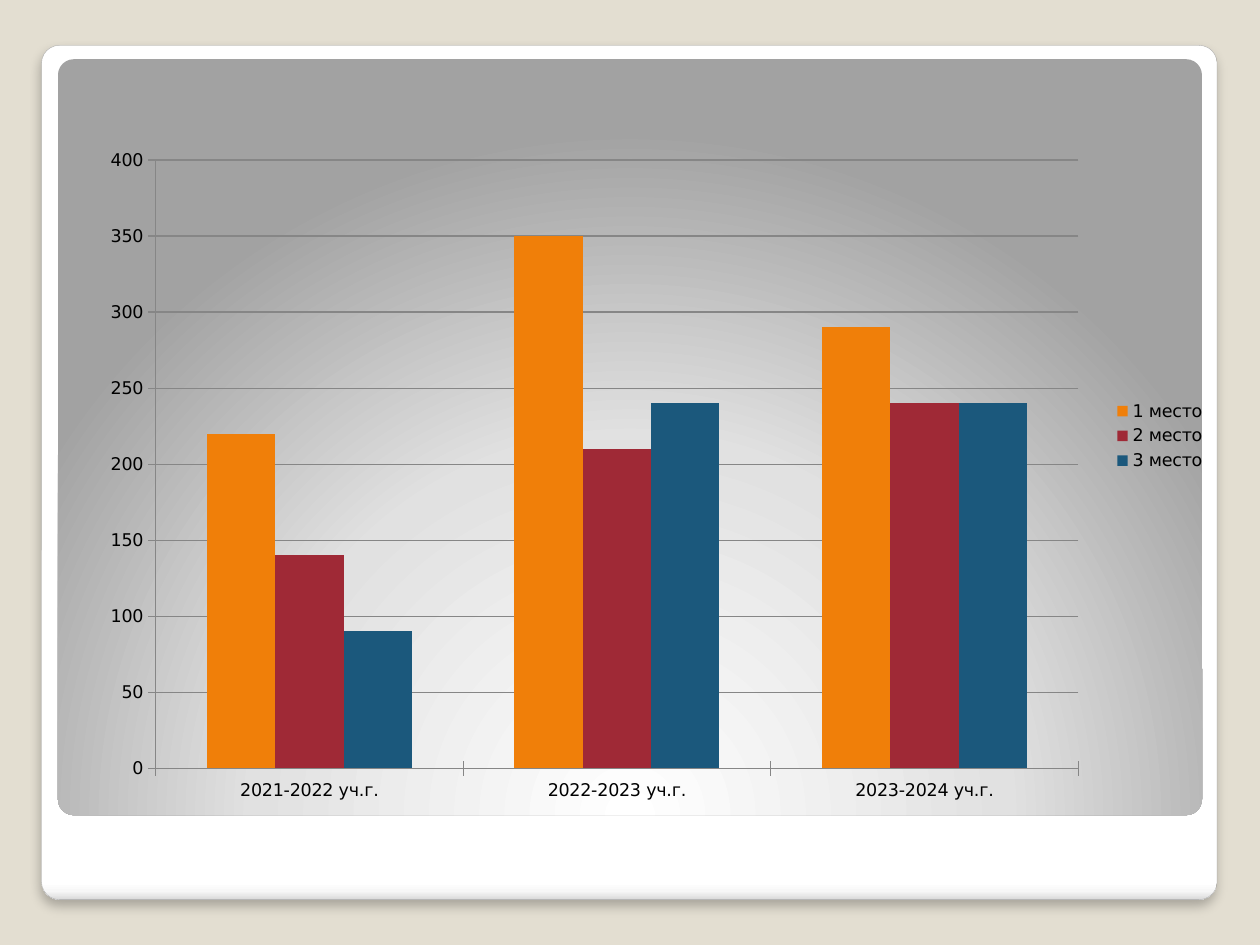
from lxml import etree
from pptx import Presentation
from pptx.chart.data import CategoryChartData
from pptx.dml.color import RGBColor
from pptx.enum.chart import XL_CHART_TYPE, XL_LEGEND_POSITION, XL_TICK_MARK
from pptx.enum.shapes import MSO_SHAPE
from pptx.oxml import parse_xml
from pptx.oxml.ns import nsdecls, qn
from pptx.util import Inches, Pt

COLUMNS = XL_CHART_TYPE.COLUMN_CLUSTERED
LEGEND_RIGHT = XL_LEGEND_POSITION.RIGHT
CROSS = XL_TICK_MARK.CROSS
ROUNDED = MSO_SHAPE.ROUNDED_RECTANGLE

# Content
YEARS = ["2021-2022 уч.г.", "2022-2023 уч.г.", "2023-2024 уч.г."]
PLACES = [
    ("1 место", (220, 350, 290), "F07F09"),
    ("2 место", (140, 210, 240), "9F2936"),
    ("3 место", (90, 240, 240), "1B587C"),
]

# Theme and geometry (inches; plot area as fractions of the chart)
THEME = {
    "font": "DejaVu Sans", "size": 10, "text": "000000", "grid": "868686",
    "background": "E3DED1", "frame_line": "A4A4A4",
    "frame": [(0, "FFFFFF"), (98, "FFFFFF"), (99, "F7F7F7"), (100, "DADADA")],
    "panel": [(0, "FFFFFF"), (55, "E1E1E1"), (100, "A2A2A2")],
}
FRAME_BOX = (0.33, 0.36, 9.33, 6.78)
PANEL_BOX = (0.46, 0.47, 9.08, 6)
CHART_BOX = (0.33, 0.25, 9.34, 6.42)
PLOT_AREA = {"x": 0.097, "y": 0.159, "w": 0.784, "h": 0.752}
DOWNWARD = '<a:lin ang="5400000" scaled="0"/>'
RADIAL = ('<a:path path="circle"><a:fillToRect l="50000" t="175000" '
          'r="50000" b="-75000"/></a:path>')


def color(value):
    return RGBColor.from_string(value)


def add_rounded_box(slide, box, stops, direction):
    shape = slide.shapes.add_shape(ROUNDED, *map(Inches, box))
    shape.adjustments[0] = 0.021
    shape.shadow.inherit = False
    shape.line.fill.background()
    stop_xml = "".join(
        f'<a:gs pos="{percent * 1000}"><a:srgbClr val="{value}"/></a:gs>'
        for percent, value in stops)
    gradient = parse_xml(
        f'<a:gradFill {nsdecls("a")} rotWithShape="1">'
        f'<a:gsLst>{stop_xml}</a:gsLst>{direction}</a:gradFill>')
    shape._element.spPr.find(qn("a:prstGeom")).addnext(gradient)
    return shape


def add_soft_shadow(shape):
    effects = shape._element.spPr.find(qn("a:effectLst"))
    effects.append(parse_xml(
        f'<a:outerShdw {nsdecls("a")} blurRad="{Pt(6)}" dist="{Pt(4)}" '
        'dir="5400000" algn="t" rotWithShape="0"><a:srgbClr val="000000">'
        '<a:alpha val="25000"/></a:srgbClr></a:outerShdw>'))


def fix_plot_area(chart):
    plot_area = chart._chartSpace.chart.plotArea
    for old in plot_area.findall(qn("c:layout")):
        plot_area.remove(old)
    layout = etree.Element(qn("c:layout"))
    manual = etree.SubElement(layout, qn("c:manualLayout"))
    settings = {"layoutTarget": "inner", "xMode": "edge", "yMode": "edge",
                **PLOT_AREA}
    for tag, value in settings.items():
        etree.SubElement(manual, qn(f"c:{tag}")).set("val", str(value))
    plot_area.insert(0, layout)


def add_places_chart(slide):
    data = CategoryChartData()
    data.categories = YEARS
    for name, values, _ in PLACES:
        data.add_series(name, values)
    chart = slide.shapes.add_chart(
        COLUMNS, *map(Inches, CHART_BOX), data).chart
    chart.has_title = False
    chart.font.name = THEME["font"]
    chart.font.size = Pt(THEME["size"])
    chart.font.color.rgb = color(THEME["text"])

    # Columns
    plot = chart.plots[0]
    plot.vary_by_categories = False
    plot.gap_width = 150
    plot.overlap = 0
    for series, (_, _, fill) in zip(plot.series, PLACES):
        series.format.fill.solid()
        series.format.fill.fore_color.rgb = color(fill)

    # Axes and legend
    value_axis = chart.value_axis
    value_axis.minimum_scale, value_axis.maximum_scale = 0, 400
    value_axis.major_unit = 50
    value_axis.has_major_gridlines = True
    for axis in (chart.category_axis, value_axis):
        axis.major_tick_mark = CROSS
    for part in (chart.category_axis, value_axis, value_axis.major_gridlines):
        part.format.line.color.rgb = color(THEME["grid"])
        part.format.line.width = Pt(0.75)
    chart.has_legend = True
    chart.legend.position = LEGEND_RIGHT
    chart.legend.include_in_layout = False
    fix_plot_area(chart)


def main():
    deck = Presentation()
    deck.slide_width, deck.slide_height = Inches(10), Inches(7.5)
    slide = deck.slides.add_slide(deck.slide_layouts[6])
    slide.background.fill.solid()
    slide.background.fill.fore_color.rgb = color(THEME["background"])

    # Framed card behind the chart
    frame = add_rounded_box(slide, FRAME_BOX, THEME["frame"], DOWNWARD)
    frame.line.color.rgb = color(THEME["frame_line"])
    frame.line.width = Pt(0.16)
    add_soft_shadow(frame)
    add_rounded_box(slide, PANEL_BOX, THEME["panel"], RADIAL)

    add_places_chart(slide)
    deck.save("out.pptx")


if __name__ == "__main__":
    main()
